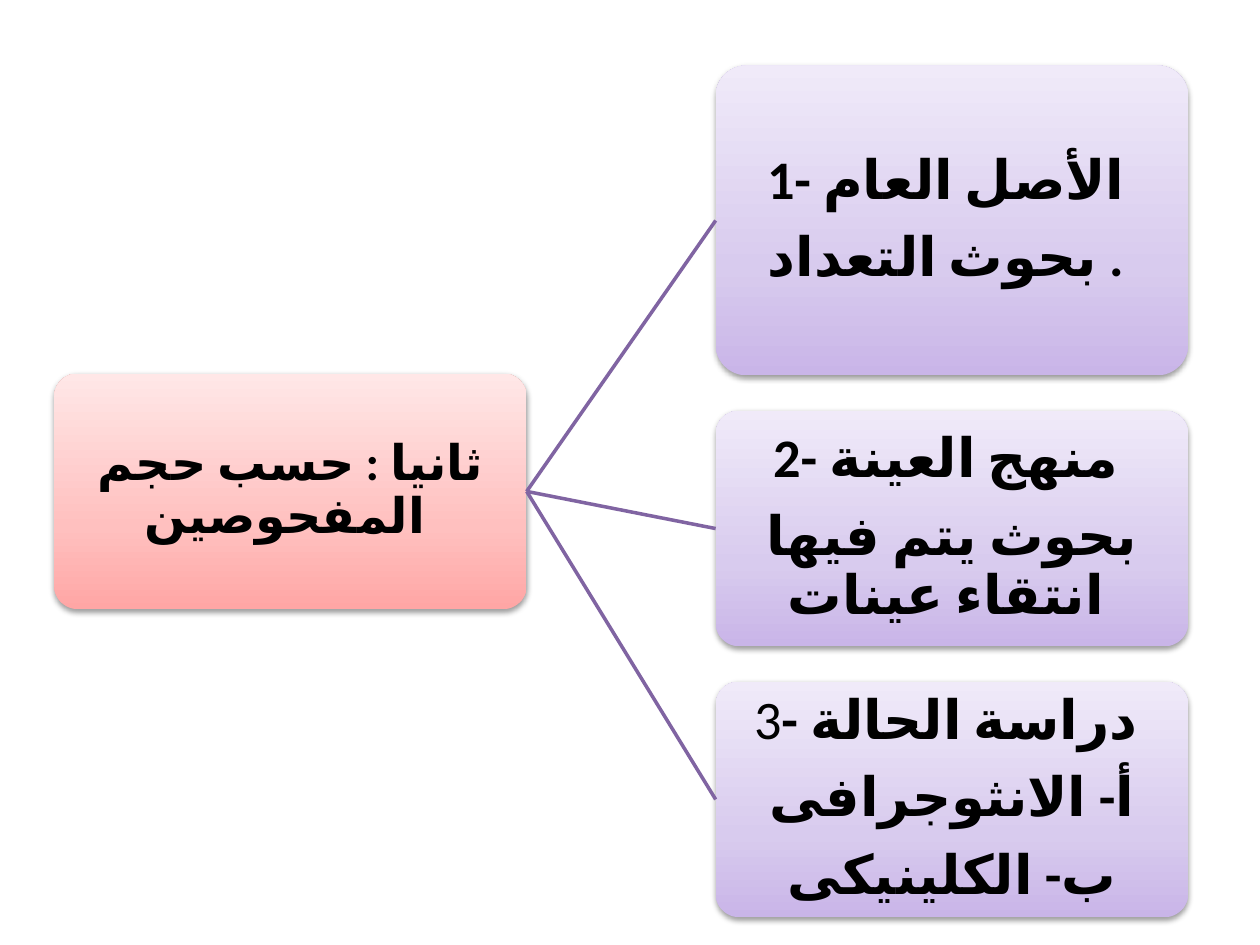
from copy import deepcopy

from lxml import etree
from pptx import Presentation, util as u
from pptx.dml.color import RGBColor
from pptx.enum import lang, shapes, text
from pptx.oxml.ns import qn

BLACK = RGBColor(0x00, 0x00, 0x00)
LINK = RGBColor(0x80, 0x64, 0xA2)
# Gradient colours from bottom to top
PINKS = [RGBColor(0xFF, 0xA6, 0xA5), RGBColor(0xFF, 0xC0, 0xBF), RGBColor(0xFF, 0xE7, 0xE7)]
PURPLES = [RGBColor(0xC9, 0xB5, 0xE8), RGBColor(0xD8, 0xCB, 0xEE), RGBColor(0xF0, 0xEA, 0xF9)]
STOPS = [0, 0.35, 1]

# Two columns of equal boxes, in inches
BOX_W, BOX_H = 3.75, 1.87
ROOT_X, BRANCH_X = 0.43, 5.68
TOP, GAP = 0.52, 0.28

ROOT = [[("ثانيا : حسب حجم المفحوصين ", True)]]
# Height and paragraphs of each branch; a paragraph is a list of (text, bold)
BRANCHES = [
    (2.46, [[("1- الأصل العام ", True)], [("بحوث التعداد . ", True)]]),
    (BOX_H, [[("2- منهج العينة ", True)], [("بحوث يتم فيها انتقاء عينات ", True)]]),
    (BOX_H, [[("3", False), ("- دراسة الحالة ", True)],
             [("أ- الانثوجرافى", True)],
             [("ب- الكلينيكى", True)]]),
]


def fill_gradient(s, colors):
    s.fill.gradient()
    s.fill.gradient_angle = 90
    stops = s._element.spPr.find(qn("a:gradFill")).find(qn("a:gsLst"))
    stops.append(deepcopy(stops[-1]))
    for stop, position, color in zip(s.fill.gradient_stops, STOPS, colors):
        stop.position = position
        stop.color.rgb = color


def add_shadow(s):
    s.shadow.inherit = False
    effects = s._element.spPr.find(qn("a:effectLst"))
    shadow = etree.SubElement(effects, qn("a:outerShdw"), blurRad="40000",
                              dist="20000", dir="5400000", rotWithShape="0")
    color = etree.SubElement(shadow, qn("a:srgbClr"), val=str(BLACK))
    etree.SubElement(color, qn("a:alpha"), val="38000")


def write(tf, paragraphs, size, font="Calibri", color=BLACK, inset=0.08):
    tf.word_wrap = True
    tf.vertical_anchor = text.MSO_ANCHOR.MIDDLE
    tf.margin_left = tf.margin_right = u.Inches(inset)
    tf.margin_top = tf.margin_bottom = u.Inches(inset)
    for i, runs in enumerate(paragraphs):
        p = tf.add_paragraph() if i else tf.paragraphs[0]
        p.alignment = text.PP_ALIGN.CENTER
        p.line_spacing = 0.9
        p.space_after = u.Pt(round(size * 0.35))
        for words, bold in runs:
            r = p.add_run()
            r.text = words
            r.font.name, r.font.size, r.font.bold = font, u.Pt(size), bold
            r.font.color.rgb = color
            r.font.language_id = lang.MSO_LANGUAGE_ID.ARABIC_EGYPT
            # Arabic letters take the complex-script font
            etree.SubElement(r._r.get_or_add_rPr(), qn("a:cs"), typeface=font)


def add_box(slide, x, y, h, paragraphs, colors, size):
    s = slide.shapes.add_shape(shapes.MSO_SHAPE.ROUNDED_RECTANGLE,
                               *map(u.Inches, (x, y, BOX_W, h)))
    s.adjustments[0] = 0.1
    s.line.fill.background()
    fill_gradient(s, colors)
    add_shadow(s)
    write(s.text_frame, paragraphs, size)
    return s


def add_link(slide, start, end):
    """Join the right side of start to the left side of end."""
    c = slide.shapes.add_connector(shapes.MSO_CONNECTOR.STRAIGHT, 0, 0, 0, 0)
    c.begin_connect(start, 3)
    c.end_connect(end, 1)
    c.line.color.rgb = LINK
    c.line.width = u.Pt(2)
    etree.SubElement(c._element.spPr, qn("a:effectLst"))


def main():
    prs = Presentation()
    prs.slide_width, prs.slide_height = u.Inches(10), u.Inches(7.5)
    slide = prs.slides.add_slide(prs.slide_layouts[6])

    column_h = sum(h for h, _ in BRANCHES) + GAP * (len(BRANCHES) - 1)
    root = add_box(slide, ROOT_X, TOP + (column_h - BOX_H) / 2, BOX_H, ROOT, PINKS, size=28)
    y = TOP
    for h, paragraphs in BRANCHES:
        branch = add_box(slide, BRANCH_X, y, h, paragraphs, PURPLES, size=31)
        add_link(slide, root, branch)
        y += h + GAP

    prs.save("out.pptx")


if __name__ == "__main__":
    main()
